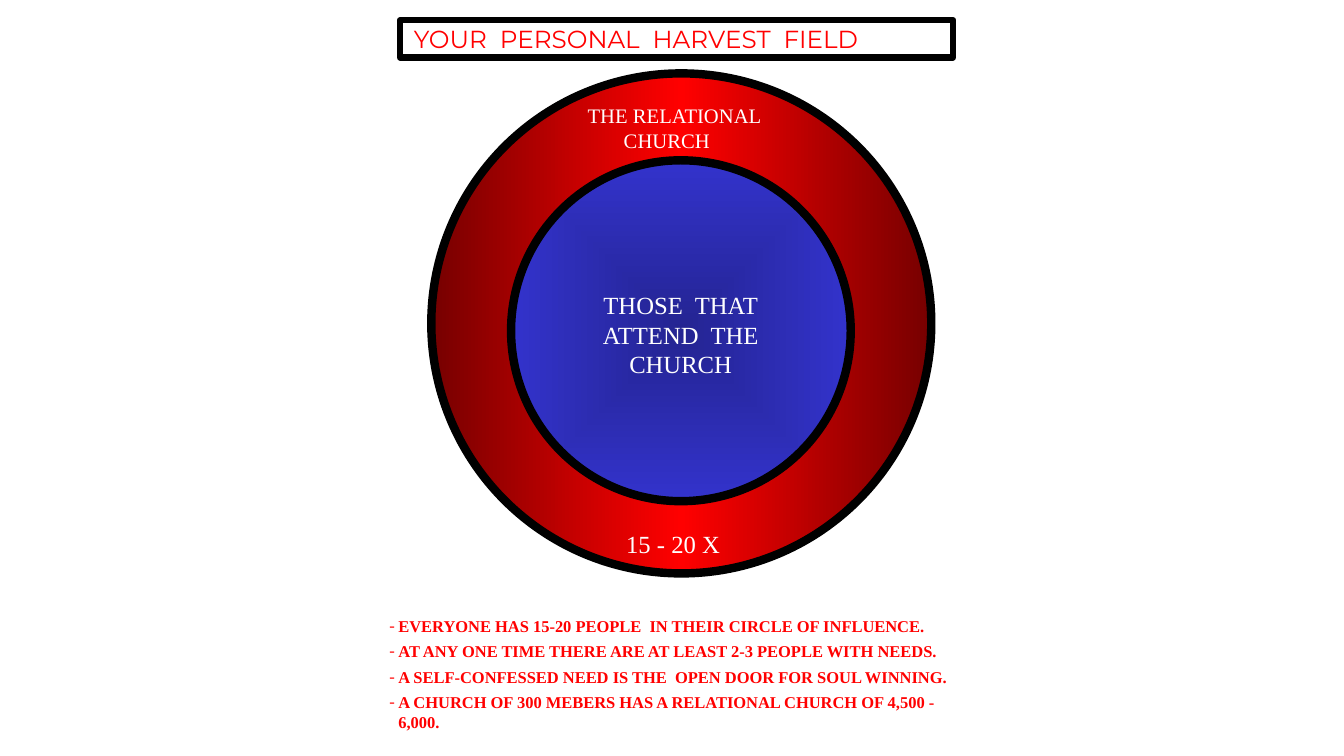
from dataclasses import dataclass

from lxml.etree import SubElement
from pptx import Presentation
from pptx.dml.color import RGBColor
from pptx.enum.shapes import MSO_SHAPE
from pptx.enum.text import MSO_ANCHOR, MSO_AUTO_SIZE, PP_ALIGN
from pptx.oxml import parse_xml
from pptx.oxml.ns import nsdecls, qn
from pptx.util import Cm, Pt


@dataclass(frozen=True)
class Theme:
    serif: str = "Times New Roman"
    heading: str = "Montserrat"
    red: str = "FF0000"
    dark_red: str = "760000"
    blue: str = "3333CC"
    dark_blue: str = "242492"
    white: str = "FFFFFF"
    black: str = "000000"
    large: float = 17.6
    medium: float = 14.7
    small: float = 11.8
    ring_line: float = 6
    frame_line: float = 4.5


THEME = Theme()
ACROSS = '<a:lin ang="0" scaled="1"/>'
FROM_CENTRE = ('<a:path path="shape"><a:fillToRect l="50000" t="50000" '
               'r="50000" b="50000"/></a:path>')


def place(shape, left, top, width, height):
    shape.left, shape.top = Cm(left), Cm(top)
    shape.width, shape.height = Cm(width), Cm(height)


def set_frame(frame, wrap=True, anchor=MSO_ANCHOR.TOP, left_inset=0.18):
    frame.auto_size = MSO_AUTO_SIZE.NONE
    frame.word_wrap = wrap
    frame.vertical_anchor = anchor
    frame.margin_left, frame.margin_right = Cm(left_inset), Cm(0.18)
    frame.margin_top = frame.margin_bottom = Cm(0.1)


def set_font(paragraph, name, size, color, bold=False):
    font = paragraph.font
    font.name, font.size, font.bold = name, Pt(size), bold
    font.color.rgb = RGBColor.from_string(color)


def set_line(shape, width):
    shape.line.color.rgb = RGBColor.from_string(THEME.black)
    shape.line.width = Pt(width)


def set_indent(paragraph, left, first=0):
    properties = paragraph._p.get_or_add_pPr()
    properties.set("marL", str(Cm(left)))
    properties.set("indent", str(Cm(first)))
    return properties


def add_ring(slide, box, colors, direction):
    ring = slide.shapes.add_shape(MSO_SHAPE.OVAL, *map(Cm, box))
    ring.shadow.inherit = False
    set_line(ring, THEME.ring_line)
    ring.fill.gradient()
    step = 100000 // (len(colors) - 1)
    stops = "".join(
        f'<a:gs pos="{index * step}"><a:srgbClr val="{color}"/></a:gs>'
        for index, color in enumerate(colors))
    gradient = parse_xml(
        f'<a:gradFill {nsdecls("a")} rotWithShape="1">'
        f'<a:gsLst>{stops}</a:gsLst>{direction}</a:gradFill>')
    properties = ring._element.spPr
    properties.replace(properties.find(qn("a:gradFill")), gradient)


def add_label(slide, box, lines, size, align=PP_ALIGN.LEFT, wrap=False):
    label = slide.shapes.add_textbox(*map(Cm, box))
    frame = label.text_frame
    set_frame(frame, wrap)
    frame.text = "\n".join(lines)
    for paragraph in frame.paragraphs:
        paragraph.alignment = align
        set_font(paragraph, THEME.serif, size, THEME.white)
    return frame.paragraphs


def fill_title(title, text):
    place(title, 10.08, 0.51, 13.94, 0.94)
    set_line(title, THEME.frame_line)
    set_frame(title.text_frame, anchor=MSO_ANCHOR.MIDDLE, left_inset=0.35)
    title.text_frame.text = text
    heading = title.text_frame.paragraphs[0]
    heading.alignment = PP_ALIGN.LEFT
    set_font(heading, THEME.heading, THEME.large, THEME.red)


def fill_points(body, points):
    place(body, 9.63, 15.42, 14.71, 3.07)
    set_frame(body.text_frame)
    body.text_frame.text = "\n".join(points)
    for index, point in enumerate(body.text_frame.paragraphs):
        properties = set_indent(point, 0.23, -0.23)
        SubElement(properties, qn("a:buFont"), typeface=THEME.serif)
        SubElement(properties, qn("a:buChar"), char="-")
        point.line_spacing = 1.0
        point.space_before = Pt(4 if index else 0)
        set_font(point, THEME.serif, THEME.small, THEME.red, bold=True)


def main():
    deck = Presentation()
    deck.slide_width, deck.slide_height = Cm(33.87), Cm(19.05)
    slide = deck.slides.add_slide(deck.slide_layouts[1])

    fill_title(slide.shapes.title, "YOUR  PERSONAL  HARVEST  FIELD")
    fill_points(slide.placeholders[1], [
        "EVERYONE HAS 15-20 PEOPLE  IN THEIR CIRCLE OF INFLUENCE.",
        "AT ANY ONE TIME THERE ARE AT LEAST 2-3 PEOPLE WITH NEEDS.",
        "A SELF-CONFESSED NEED IS THE  OPEN DOOR FOR SOUL WINNING.",
        "A CHURCH OF 300 MEBERS HAS A RELATIONAL CHURCH OF 4,500 -\v6,000.",
    ])

    add_ring(slide, (10.87, 1.85, 12.6, 12.6),
             [THEME.dark_red, THEME.red, THEME.dark_red], ACROSS)
    add_ring(slide, (12.88, 4.04, 8.56, 8.59),
             [THEME.dark_blue, THEME.blue], FROM_CENTRE)

    add_label(slide, (14.12, 7.21, 6.07, 2.46),
              ["THOSE  THAT", "ATTEND  THE", "CHURCH"],
              THEME.large, PP_ALIGN.CENTER, wrap=True)
    relational = add_label(slide, (14.63, 2.49, 4.78, 1.45),
                           ["THE RELATIONAL", "CHURCH"], THEME.medium)
    set_indent(relational[1], 0.91)
    add_label(slide, (15.6, 13.23, 2.77, 0.94), ["15 - 20 X"], THEME.large)

    deck.save("out.pptx")


if __name__ == "__main__":
    main()
